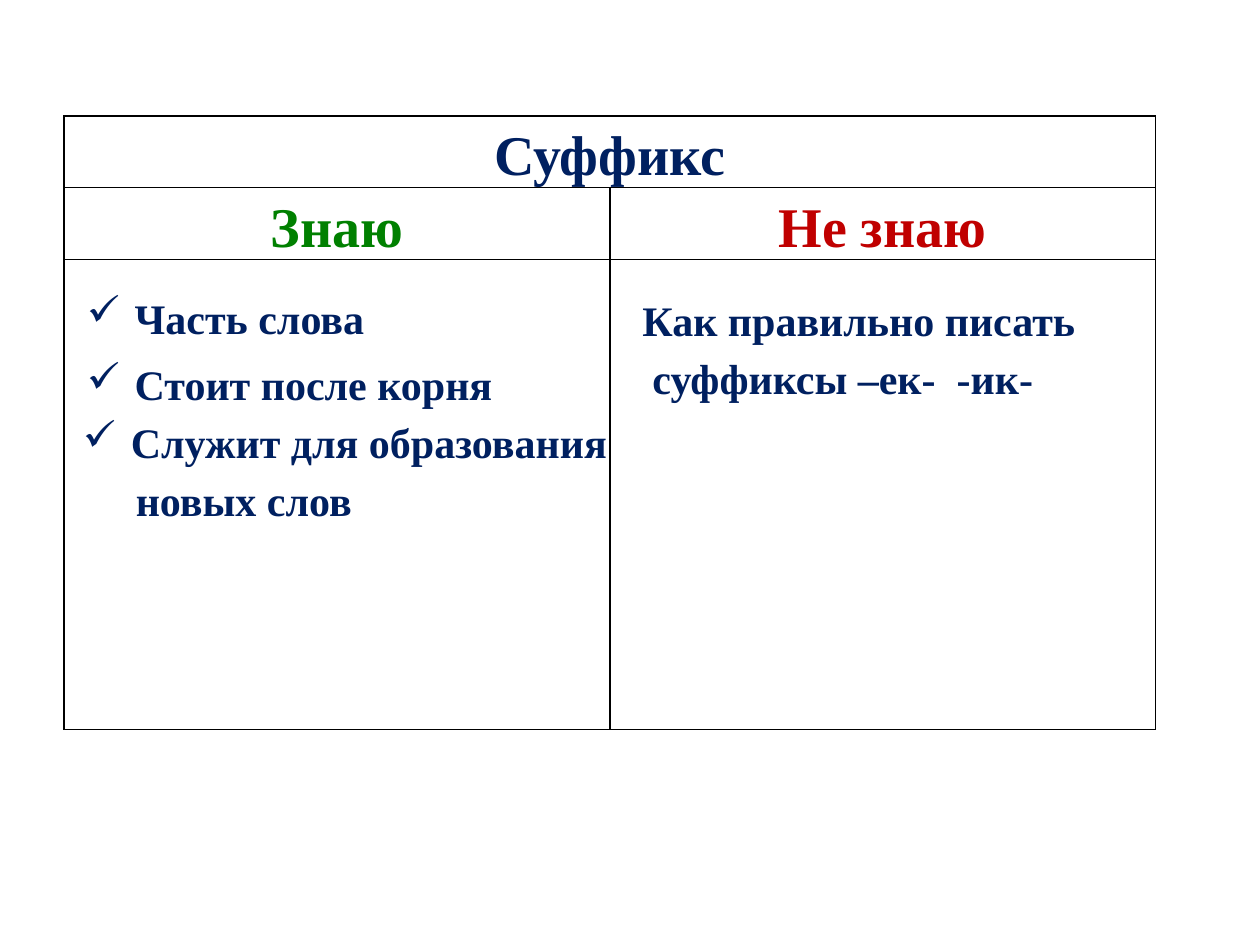
import pptx
import pptx.util
import pptx.dml.color
import pptx.enum.text
import pptx.oxml.ns
import lxml.etree

Inches, Pt = pptx.util.Inches, pptx.util.Pt
qn = pptx.oxml.ns.qn
COLORS = {"navy": "002060", "green": "008000", "red": "C00000", "border": "000000"}

prs = pptx.Presentation()
prs.slide_width, prs.slide_height = Inches(10), Inches(7.5)
s = prs.slides.add_slide(prs.slide_layouts[6])


def write(p, text, size, color):
    p.text = text
    p.line_spacing = 1.15
    font = p.runs[0].font
    font.name, font.size, font.bold = "Times New Roman", Pt(size), True
    font.color.rgb = pptx.dml.color.RGBColor.from_string(COLORS[color])


# Table grid: two equal columns, two heading rows and a tall body row
col, heading, body = 4.33, 0.57, 3.73
table = s.shapes.add_table(3, 2, Inches(0.51), Inches(0.92),
                           Inches(2 * col), Inches(2 * heading + body)).table
table.first_row = table.horz_banding = False
for column in table.columns:
    column.width = Inches(col)
for row, height in zip(table.rows, (heading, heading, body)):
    row.height = Inches(height)

# Cell borders, margins and empty fills
for cell in table.iter_cells():
    cell.margin_left = cell.margin_right = Inches(0.07)
    cell.margin_top = cell.margin_bottom = 0
    tcPr = cell._tc.get_or_add_tcPr()
    for side in ("a:lnL", "a:lnR", "a:lnT", "a:lnB"):
        ln = lxml.etree.SubElement(tcPr, qn(side), w=str(Pt(1)))
        fill = lxml.etree.SubElement(ln, qn("a:solidFill"))
        lxml.etree.SubElement(fill, qn("a:srgbClr"), val=COLORS["border"])
    cell.fill.background()

# Headings
table.cell(0, 0).merge(table.cell(0, 1))
for r, c, text, color in ((0, 0, "Суффикс", "navy"),
                          (1, 0, "Знаю", "green"),
                          (1, 1, "Не знаю", "red")):
    p = table.cell(r, c).text_frame.paragraphs[0]
    write(p, text, 32, color)
    p.alignment = pptx.enum.text.PP_ALIGN.CENTER

# Notes over the body row: box, then (text, left indent, has a check mark)
notes = [
    ((0.59, 2.74, 3.45, 0.53), [("Стоит после корня", 0.38, True)]),
    ((0.56, 3.2, 4.4, 1.03), [("Служит для образования", 0.38, True),
                              ("новых слов", 0.42, False)]),
    ((0.59, 2.21, 2.42, 0.53), [("Часть слова", 0.38, True)]),
    ((5, 2.23, 3.68, 0.99), [("Как правильно писать", 0, False),
                             ("суффиксы –ек-  -ик-", 0.08, False)]),
]
for box, lines in notes:
    tf = s.shapes.add_textbox(*map(Inches, box)).text_frame
    tf.word_wrap = False
    tf.auto_size = pptx.enum.text.MSO_AUTO_SIZE.SHAPE_TO_FIT_TEXT
    for i, (text, indent, checked) in enumerate(lines):
        p = tf.add_paragraph() if i else tf.paragraphs[0]
        write(p, text, 24, "navy")
        pPr = p._p.get_or_add_pPr()
        pPr.set("marL", str(Inches(indent)))
        if checked:
            pPr.set("indent", str(-Inches(indent)))
            lxml.etree.SubElement(pPr, qn("a:buChar"), char="✓")

prs.save("out.pptx")
